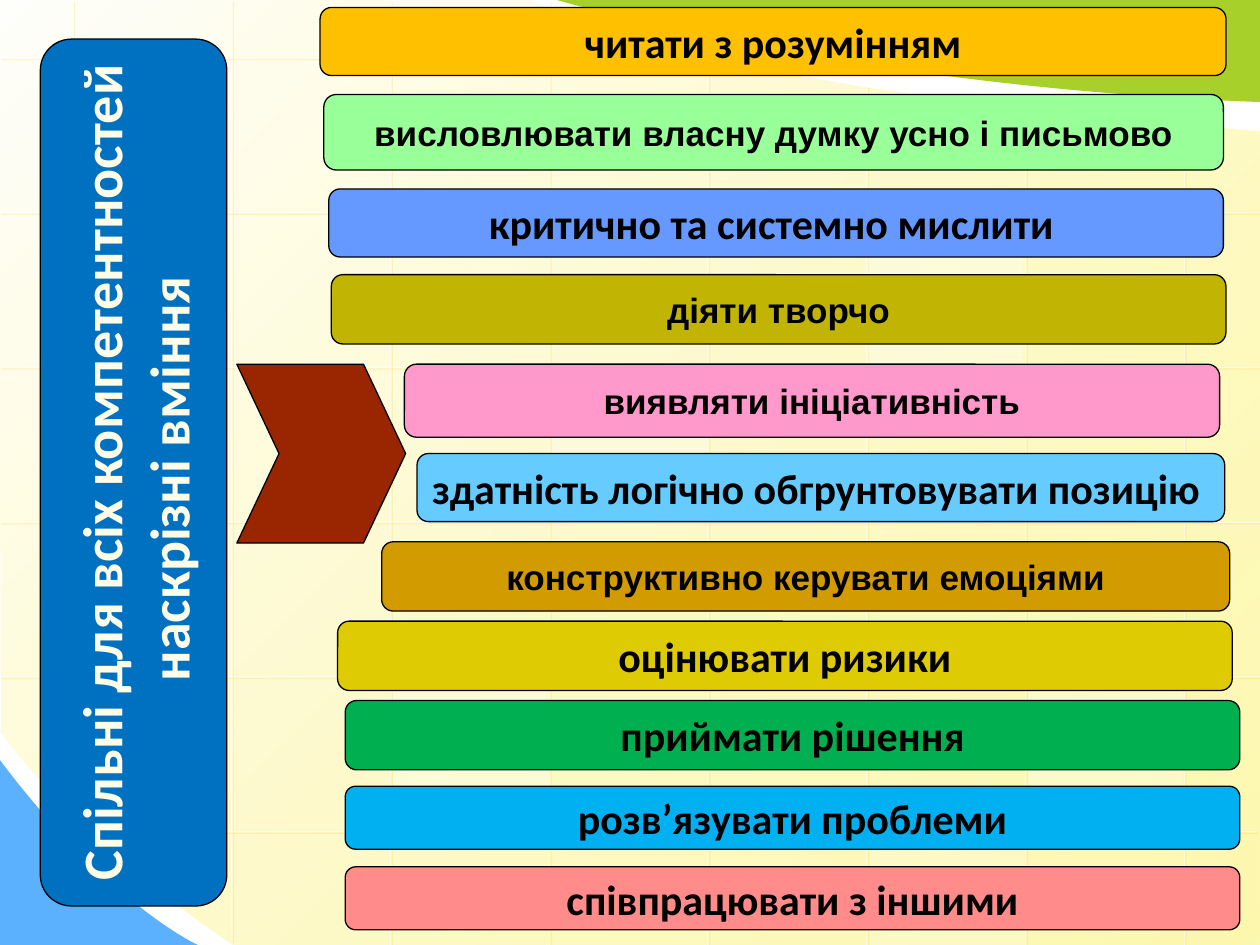
from typing import NamedTuple

from lxml import etree
from pptx import Presentation
from pptx.dml.color import RGBColor
from pptx.enum.shapes import MSO_CONNECTOR as Connector, MSO_SHAPE as Shape
from pptx.enum.text import MSO_ANCHOR as Anchor, PP_ALIGN as Align
from pptx.oxml import parse_xml
from pptx.oxml.ns import nsdecls, qn
from pptx.util import Inches, Pt

Point = tuple[float, float]
CALIBRI = {"name": "Calibri", "size": Pt(24), "bold": True}
ARIAL = {"name": "Arial", "size": Pt(20), "bold": True}
TITLE = {"name": "Calibri", "size": Pt(32), "bold": True}
UNITS = 100  # outline units per inch


class Box(NamedTuple):
    left: float
    top: float
    width: float
    height: float


class Skill(NamedTuple):
    text: str
    box: Box
    fill: str
    font: dict


class Tile(NamedTuple):
    box: Box
    opacity: int


class Curve(NamedTuple):
    """Cubic curve from the previous point."""
    first: Point
    second: Point
    end: Point


SKILLS = [
    Skill("читати з розумінням", Box(2.54, 0.06, 7.19, 0.54), "FFC000", CALIBRI),
    Skill("висловлювати власну думку усно і письмово", Box(2.57, 0.75, 7.14, 0.6), "99FF99", ARIAL),
    Skill("здатність логічно обгрунтовувати позицію ", Box(3.31, 3.6, 6.41, 0.54), "66CCFF", CALIBRI),
    Skill("критично та системно мислити ", Box(2.61, 1.5, 7.1, 0.54), "6699FF", CALIBRI),
    Skill("діяти творчо", Box(2.63, 2.18, 7.1, 0.55), "C2B403", ARIAL),
    Skill("виявляти ініціативність", Box(3.21, 2.89, 6.47, 0.58), "FF99CC", ARIAL),
    Skill("конструктивно керувати емоціями", Box(3.03, 4.3, 6.73, 0.55), "D29B00", ARIAL),
    Skill("оцінювати ризики", Box(2.68, 4.93, 7.1, 0.55), "DECB04", CALIBRI),
    Skill("приймати рішення", Box(2.74, 5.56, 7.1, 0.55), "00B050", CALIBRI),
    Skill("розв’язувати проблеми", Box(2.74, 6.24, 7.1, 0.5), "00B0F0", CALIBRI),
    Skill("співпрацювати з іншими", Box(2.74, 6.88, 7.1, 0.5), "FF8B8B", CALIBRI),
]
TILES = [
    Tile(Box(4.38, 2.94, 1.23, 1.18), 25),
    Tile(Box(8.16, 5.4, 1.23, 1.18), 30),
    Tile(Box(0.6, 4.16, 1.23, 1.18), 20),
    Tile(Box(6.9, 6.63, 1.23, 0.87), 20),
    Tile(Box(3.11, 0, 1.23, 0.44), 40),
    Tile(Box(3.12, 5.4, 1.23, 1.18), 30),
    Tile(Box(6.89, 1.71, 1.23, 1.18), 30),
]
COLUMN_SPANS = [(0, 6.46), (0, 7.47), (0, 7.5), (0, 7.52),
                (0.43, 7.52), (0.68, 7.52), (0.85, 7.52), (0.98, 7.52)]
ROW_SPANS = [(0, 5.68)] + [(0, 10.01)] * 4 + [(0.76, 9.97)]
PANEL = [
    Curve((10, 4.27), (10, 7.5), (10, 7.5)), (1.87, 7.51),
    Curve((0.54, 6.6), (0.01, 5.8), (0.01, 5.81)), (-0.01, -0.01), (4.2, 0),
    Curve((4.2, 0.01), (5.36, 0.69), (10, 1.04)),
]
BLUE_CORNER = [
    Curve((-0.01, 6.76), (-0.01, 7.5), (-0.01, 7.5)), (1.57, 7.5),
    Curve((1.57, 7.5), (0.86, 7.18), (-0.01, 6.02)),
]
GREEN_CORNER = [
    Curve((10, 0.4), (10, 0), (10, 0)), (4.42, 0),
    Curve((4.42, 0), (6.74, 0.69), (10, 0.81)),
]


def color(value: str) -> RGBColor:
    return RGBColor.from_string(value)


def set_opacity(shape, percent: int) -> None:
    """Make the last explicit colour of the shape translucent."""
    last = list(shape._element.iter(qn("a:srgbClr")))[-1]
    etree.SubElement(last, qn("a:alpha")).set("val", str(percent * 1000))


def add_outline(slide, start: Point, parts: list, fill: str = ""):
    """Draw straight segments, then bend those that are curves."""
    def scaled(point: Point) -> Point:
        return round(point[0] * UNITS), round(point[1] * UNITS)

    ends = [scaled(part.end if isinstance(part, Curve) else part) for part in parts]
    corners = [scaled(start), *ends]
    left, top = (min(values) for values in zip(*corners))
    builder = slide.shapes.build_freeform(*corners[0], scale=Inches(1) / UNITS)
    builder.add_line_segments(ends, close=True)
    shape = builder.convert_to_shape()
    segments = list(shape._element.iter(qn("a:lnTo")))
    for part, segment in zip(parts, segments):
        if isinstance(part, Curve):
            bend = etree.Element(qn("a:cubicBezTo"))
            for x, y in map(scaled, part):
                etree.SubElement(bend, qn("a:pt"), x=str(x - left), y=str(y - top))
            segment.getparent().replace(segment, bend)
    shape.shadow.inherit = False
    shape.line.fill.background()
    if fill:
        shape.fill.solid()
        shape.fill.fore_color.rgb = color(fill)
    return shape


def add_box(slide, kind: Shape, box: Box, fill: str, outlined: bool = True):
    shape = slide.shapes.add_shape(kind, *map(Inches, box))
    shape.shadow.inherit = False
    shape.fill.solid()
    shape.fill.fore_color.rgb = color(fill)
    if outlined:
        shape.line.color.rgb = color("000000")
        shape.line.width = Pt(0.75)
    else:
        shape.line.fill.background()
    return shape


def write(shape, lines: list[str], font: dict, text_color: str) -> None:
    frame = shape.text_frame
    frame.word_wrap = False
    frame.vertical_anchor = Anchor.MIDDLE
    for index, line in enumerate(lines):
        paragraph = frame.add_paragraph() if index else frame.paragraphs[0]
        paragraph.alignment = Align.CENTER
        run = paragraph.add_run()
        run.text = line
        for name, value in font.items():
            setattr(run.font, name, value)
        run.font.color.rgb = color(text_color)


def add_grid_line(slide, start: Point, end: Point) -> None:
    line = slide.shapes.add_connector(Connector.STRAIGHT, *map(Inches, (*start, *end)))
    line.line.color.rgb = color("FFFFFF")
    line.line.width = Pt(0.75)
    set_opacity(line, 50)
    line._element.spPr.append(parse_xml(
        f'<a:effectLst {nsdecls("a")}><a:outerShdw dist="17780" dir="2700000">'
        '<a:srgbClr val="FFC319"><a:alpha val="35000"/></a:srgbClr>'
        '</a:outerShdw></a:effectLst>'))


def draw_background(slide) -> None:
    panel = add_outline(slide, (10, 1.04), PANEL)
    panel.fill.gradient()
    panel.fill.gradient_angle = 315
    for stop, position, value in zip(panel.fill.gradient_stops, (0, 1), ("FFFFFC", "FDF58D")):
        stop.position = position
        stop.color.rgb = color(value)
    set_opacity(panel, 70)
    add_outline(slide, (-0.01, 6.02), BLUE_CORNER, "5CB1FE")
    for index, (top, bottom) in enumerate(COLUMN_SPANS):
        x = 0.58 + 1.26 * index
        add_grid_line(slide, (x, top), (x, bottom))
    for index, (left, right) in enumerate(ROW_SPANS):
        y = 0.46 + 1.228 * index
        add_grid_line(slide, (right, y), (left, y))
    for tile in TILES:
        set_opacity(add_box(slide, Shape.RECTANGLE, tile.box, "FFFFFF", False), tile.opacity)
    add_outline(slide, (10, 0.81), GREEN_CORNER, "A8D02A")


def main() -> None:
    presentation = Presentation()
    presentation.slide_width, presentation.slide_height = Inches(10), Inches(7.5)
    slide = presentation.slides.add_slide(presentation.slide_layouts[6])
    draw_background(slide)

    title = add_box(slide, Shape.ROUNDED_RECTANGLE, Box(-2.38, 3.01, 6.88, 1.48), "0070C0")
    title.rotation = 270
    write(title, ["Спільні для всіх компетентностей", "наскрізні вміння "], TITLE, "FFFDE8")
    chevron = add_box(slide, Shape.CHEVRON, Box(1.88, 2.89, 1.34, 1.42), "992600")
    chevron.adjustments[0] = 0.25
    for skill in SKILLS:
        bar = add_box(slide, Shape.ROUNDED_RECTANGLE, skill.box, skill.fill)
        write(bar, [skill.text], skill.font, "000000")
    presentation.save("out.pptx")


if __name__ == "__main__":
    main()
